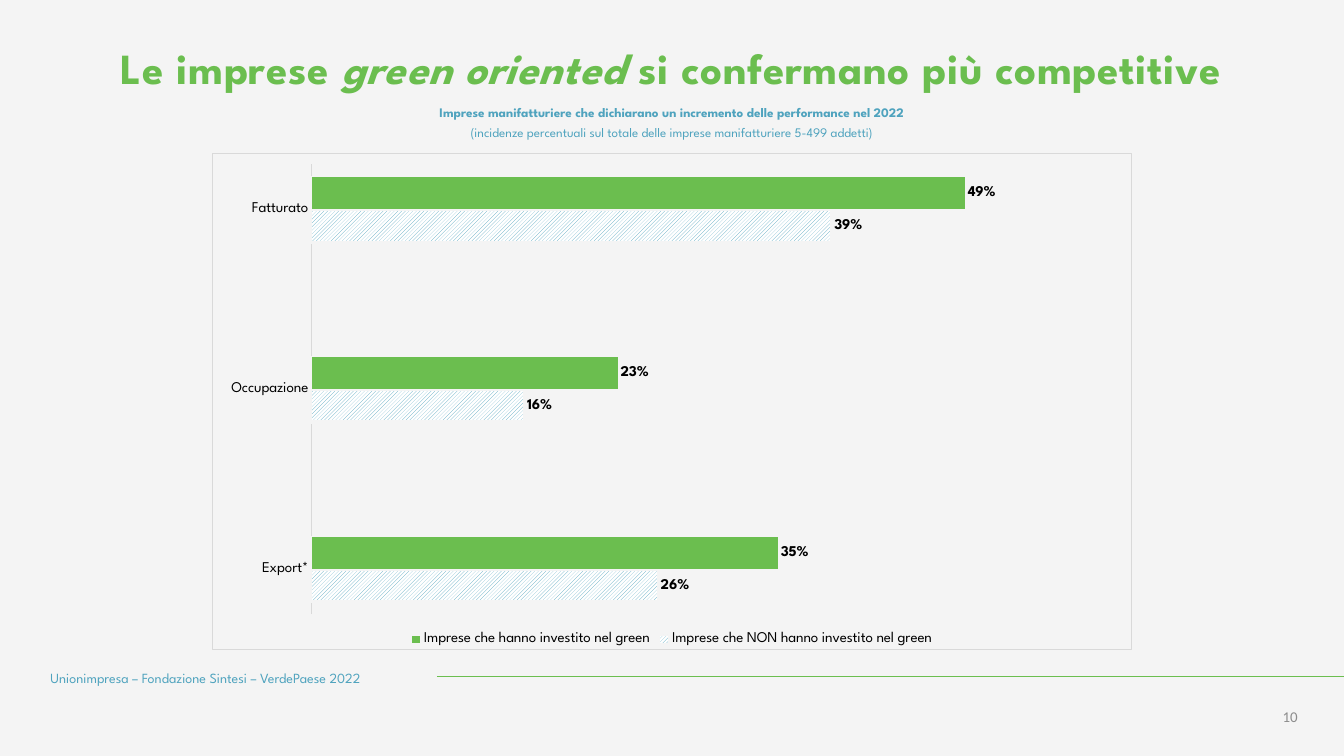
from dataclasses import dataclass
from typing import Optional

from lxml import etree
from pptx import Presentation
from pptx import util as u
from pptx.chart.data import CategoryChartData
from pptx.dml.color import RGBColor
from pptx.enum import chart as ch, dml, shapes, text
from pptx.oxml import parse_xml
from pptx.oxml.ns import nsdecls, qn

COLORS = {"bg": "F4F4F4", "green": "6BBE4F", "blue": "4FA3BE", "black": "000000",
          "white": "FFFFFF", "border": "D9D9D9", "page": "8C8C8C"}
COLS, ROWS = 200, 112.5
WIDTH, HEIGHT = u.Inches(20), u.Inches(11.25)
SPARTAN, CALIBRI = "League Spartan", "Calibri"


@dataclass
class Box:
    col: float
    row: float
    cols: float
    rows: float

    def emu(self) -> tuple:
        return x(self.col), y(self.row), x(self.cols), y(self.rows)


@dataclass
class Run:
    text: str
    bold: bool = False
    italic: bool = False


@dataclass
class Block:
    box: Box
    paragraphs: list
    size: float
    color: str
    font: str = SPARTAN
    align: text.PP_ALIGN = text.PP_ALIGN.LEFT
    leading: Optional[float] = None
    spacing: Optional[int] = None
    margin: float = 0
    anchor: text.MSO_ANCHOR = text.MSO_ANCHOR.TOP


@dataclass
class Series:
    name: str
    values: tuple
    outline: float
    hatched: bool = False


def x(cols: float) -> int:
    return round(WIDTH * cols / COLS)


def y(rows: float) -> int:
    return round(HEIGHT * rows / ROWS)


def rgb(key: str) -> RGBColor:
    return RGBColor.from_string(COLORS[key])


def style_font(font, size: float, color: str, name: str = SPARTAN, bold: bool = False) -> None:
    font.size, font.name, font.bold = u.Pt(size), name, bold
    font.color.rgb = rgb(color)


def fill_text(sp, b: Block) -> None:
    sp.left, sp.top, sp.width, sp.height = b.box.emu()
    tf = sp.text_frame
    tf.word_wrap, tf.auto_size = True, text.MSO_AUTO_SIZE.NONE
    tf.vertical_anchor = b.anchor
    tf.margin_left = tf.margin_right = u.Inches(b.margin)
    tf.margin_top = tf.margin_bottom = u.Inches(b.margin / 2)
    for i, runs in enumerate(b.paragraphs):
        p = tf.add_paragraph() if i else tf.paragraphs[0]
        p.alignment = b.align
        if b.leading:
            p.line_spacing = u.Pt(b.leading)
        for run in runs:
            r = p.add_run()
            r.text = run.text
            style_font(r.font, b.size, b.color, b.font, run.bold)
            r.font.italic = run.italic
            if b.spacing:
                r.font._element.set("spc", str(b.spacing))


def format_series(s, series: Series) -> None:
    fill = s.format.fill
    if series.hatched:
        fill.patterned()
        fill.pattern = dml.MSO_PATTERN.WIDE_UPWARD_DIAGONAL
        fill.fore_color.rgb, fill.back_color.rgb = rgb("blue"), rgb("white")
    else:
        fill.solid()
        fill.fore_color.rgb = rgb("green")
    s.invert_if_negative = False
    s.format.line.color.rgb = rgb("bg")
    s.format.line.width = u.Pt(series.outline)
    labels = s.data_labels
    labels.show_value = True
    labels.number_format, labels.number_format_is_linked = "0%", False
    labels.position = ch.XL_LABEL_POSITION.OUTSIDE_END
    style_font(labels.font, 16, "black", bold=True)


def frame_chart(chart, inner: dict) -> None:
    space = chart._chartSpace
    space.find(qn("c:chart")).addnext(parse_xml(
        f'<c:spPr {nsdecls("c", "a")}><a:noFill/><a:ln w="9525"><a:solidFill>'
        f'<a:srgbClr val="{COLORS["border"]}"/></a:solidFill></a:ln></c:spPr>'))
    area = space.find(qn("c:chart")).find(qn("c:plotArea"))
    for old in area.findall(qn("c:layout")):
        area.remove(old)
    layout = etree.Element(qn("c:layout"))
    manual = etree.SubElement(layout, qn("c:manualLayout"))
    settings = {"layoutTarget": "inner", "xMode": "edge", "yMode": "edge", **inner}
    for tag, val in settings.items():
        etree.SubElement(manual, qn(f"c:{tag}")).set("val", str(val))
    area.insert(0, layout)


def draw_chart(s, box: Box, categories: tuple, series: tuple) -> None:
    data = CategoryChartData(number_format="0%")
    data.categories = categories
    for item in series:
        data.add_series(item.name, item.values)
    chart = s.shapes.add_chart(ch.XL_CHART_TYPE.BAR_CLUSTERED, *box.emu(), data).chart
    style_font(chart.font, 10, "black", CALIBRI)
    chart.has_title = False
    chart.has_legend = True
    chart.legend.position = ch.XL_LEGEND_POSITION.BOTTOM
    chart.legend.include_in_layout = False
    style_font(chart.legend.font, 16, "black")
    plot = chart.plots[0]
    plot.gap_width, plot.overlap, plot.vary_by_categories = 75, 0, False
    for drawn, item in zip(plot.series, series):
        format_series(drawn, item)
    cat, val = chart.category_axis, chart.value_axis
    cat.major_tick_mark = cat.minor_tick_mark = ch.XL_TICK_MARK.NONE
    style_font(cat.tick_labels.font, 16, "black")
    cat.format.line.color.rgb = rgb("border")
    cat.format.line.width = u.Pt(0.75)
    val.minimum_scale, val.maximum_scale = 0, 0.6
    val.has_major_gridlines = val.visible = False
    frame_chart(chart, {"x": 0.107, "y": 0.022, "w": 0.872, "h": 0.907})


def draw_line(s, start: float, end: float, row: float) -> None:
    line = s.shapes.add_connector(shapes.MSO_CONNECTOR.STRAIGHT, x(start), y(row), x(end), y(row))
    line.line.color.rgb = rgb("green")
    line.line.width = u.Pt(0.75)
    etree.SubElement(line._element.spPr, qn("a:effectLst"))


CENTER, RIGHT = text.PP_ALIGN.CENTER, text.PP_ALIGN.RIGHT
TITLE = Block(Box(5.8, 6.2, 188.3, 7.7), [[
    Run("Le imprese ", True), Run("green oriented ", True, True),
    Run("si confermano più competitive", True)]], 46, "green", align=CENTER, spacing=80)
BLOCKS = (
    Block(Box(31.6, 15, 136.8, 5.6), [
        [Run("Imprese manifatturiere che dichiarano un incremento delle performance nel 2022", True)],
        [Run("(incidenze percentuali sul totale delle imprese manifatturiere 5-499 addetti)")],
    ], 14, "blue", align=CENTER, leading=21),
    Block(Box(7.5, 99.2, 55.5, 2.7), [[Run("Unionimpresa – Fondazione Sintesi – VerdePaese 2022")]],
          15, "blue", leading=21),
    Block(Box(170.8, 104.6, 23.3, 4), [[Run("10")]], 16, "page", CALIBRI, RIGHT,
          margin=0.1, anchor=text.MSO_ANCHOR.MIDDLE),
)
CATEGORIES = ("Export*", "", "Occupazione", "", "Fatturato")
SERIES = (
    Series("Imprese che NON hanno investito nel green", (0.26, None, 0.16, None, 0.39), 3.25, True),
    Series("Imprese che hanno investito nel green", (0.35, None, 0.23, None, 0.49), 0.75),
)


def main() -> None:
    prs = Presentation()
    prs.slide_width, prs.slide_height = WIDTH, HEIGHT
    s = prs.slides.add_slide(prs.slide_layouts[5])
    s.background.fill.solid()
    s.background.fill.fore_color.rgb = rgb("bg")
    fill_text(s.shapes.title, TITLE)
    draw_chart(s, Box(31.6, 22.8, 136.8, 73.9), CATEGORIES, SERIES)
    for b in BLOCKS:
        fill_text(s.shapes.add_textbox(*b.box.emu()), b)
    draw_line(s, 65, COLS, 100.7)
    prs.save("out.pptx")


if __name__ == "__main__":
    main()
